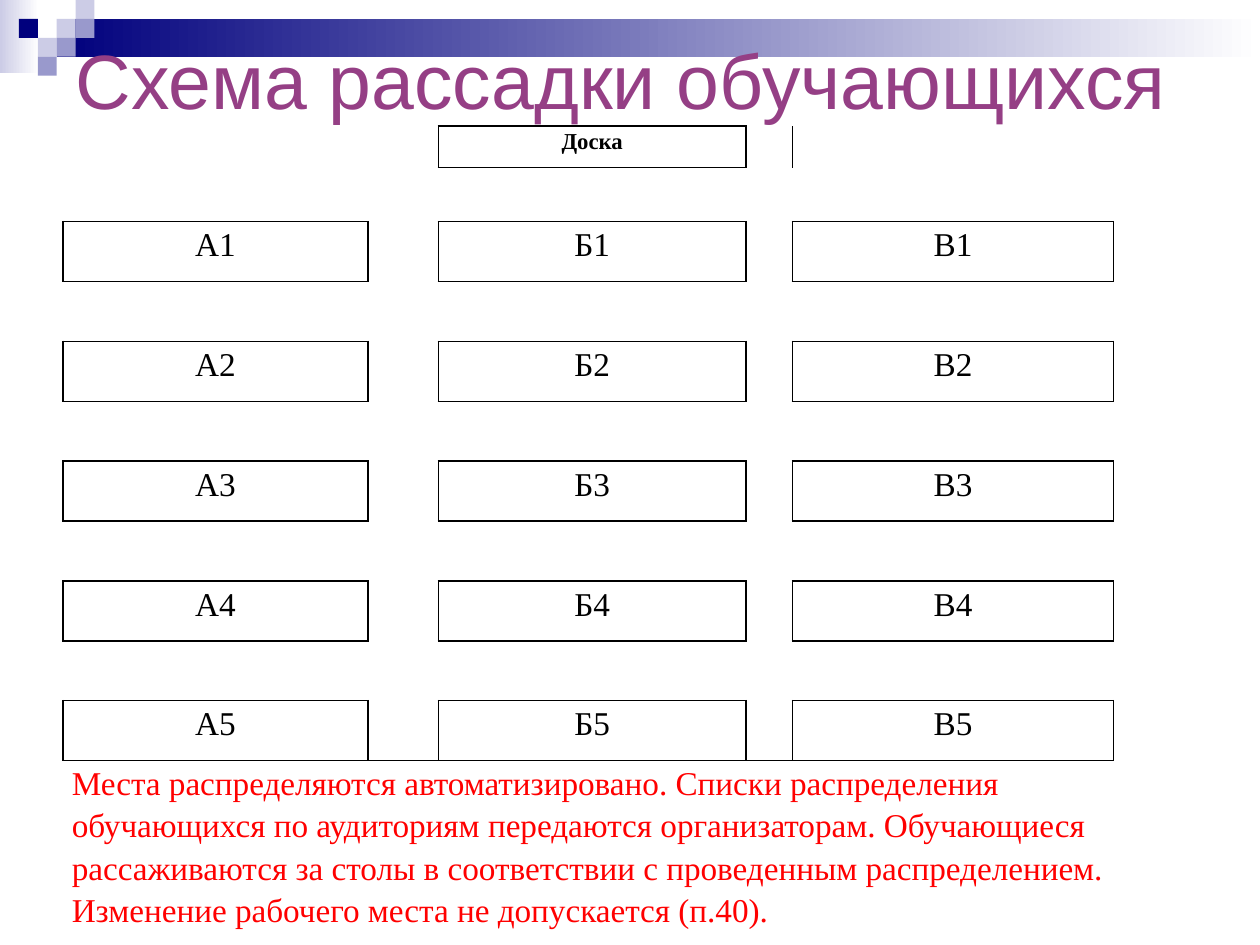
from dataclasses import dataclass

from lxml.etree import SubElement
from pptx import Presentation
from pptx.dml.color import RGBColor
from pptx.enum.shapes import MSO_SHAPE
from pptx.enum.text import MSO_ANCHOR, PP_ALIGN
from pptx.oxml.ns import qn
from pptx.util import Inches, Pt


@dataclass(frozen=True)
class Theme:
    navy: str = "00007D"
    lilac: str = "9999CC"
    pale: str = "CCCCE6"
    white: str = "FFFFFF"
    title: str = "953F85"
    ink: str = "000000"
    alert: str = "FF0000"
    title_font: str = "Arial"
    table_font: str = "Times New Roman"
    title_size: int = 44
    seat_size: int = 19
    board_size: int = 13
    border_width: int = 1


@dataclass(frozen=True)
class Band:
    left: float
    top: float
    width: float
    height: float
    color: str


@dataclass(frozen=True)
class Tile:
    column: int
    row: int
    color: str


THEME = Theme()
TILE = 0.15
BANDS = [
    Band(0, 0, 0.31, 0.58, THEME.pale),
    Band(0.45, 0.15, 9.55, 0.3, THEME.navy),
]
TILES = [
    Tile(3, 1, THEME.pale),
    Tile(4, 0, THEME.pale),
    Tile(4, 1, THEME.lilac),
    Tile(2, 2, THEME.pale),
    Tile(1, 1, THEME.navy),
    Tile(3, 2, THEME.lilac),
    Tile(2, 3, THEME.lilac),
]

SEAT_LETTERS = "АБВ"
SEAT_ROWS = 5
SEAT_BLOCK_HEIGHT = 4.28
COLUMN_WIDTHS = [2.42, 0.56, 2.44, 0.37, 2.55, 0.58]
BLOCK_ROWS = 2 * SEAT_ROWS - 1
ROW_HEIGHTS = [0.33, 0.43] + [SEAT_BLOCK_HEIGHT / BLOCK_ROWS] * BLOCK_ROWS + [2.91]
NOTE_ROW = len(ROW_HEIGHTS) - 1
NOTE_SPAN = 5
NOTE = (
    "Места распределяются автоматизировано. Списки распределения обучающихся "
    "по аудиториям передаются организаторам. Обучающиеся рассаживаются за столы "
    "в соответствии с проведенным распределением. Изменение рабочего места "
    "не допускается (п.40)."
)
BOARD = (0, 2)
SEATS = {
    (2 + 2 * row, 2 * column): f"{letter}{row + 1}"
    for row in range(SEAT_ROWS)
    for column, letter in enumerate(SEAT_LETTERS)
}
BOXES = {BOARD, *SEATS}
NO_GRID_STYLE = "{2D5ABB26-0587-4C30-8999-92F81FD0307C}"
# Border tags in schema order, each with the step to the neighbouring cell
SIDES = {"a:lnL": (0, -1), "a:lnR": (0, 1), "a:lnT": (-1, 0), "a:lnB": (1, 0)}


def rgb(color: str) -> RGBColor:
    return RGBColor.from_string(color)


def add_block(slide, left: float, top: float, width: float, height: float):
    block = slide.shapes.add_shape(
        MSO_SHAPE.RECTANGLE, Inches(left), Inches(top), Inches(width), Inches(height)
    )
    block.shadow.inherit = False
    block.line.fill.background()
    return block


def draw_band(slide, band: Band) -> None:
    fill = add_block(slide, band.left, band.top, band.width, band.height).fill
    fill.gradient()
    fill.gradient_angle = 0
    for stop, color, position in zip(fill.gradient_stops, (band.color, THEME.white), (0, 1)):
        stop.color.rgb = rgb(color)
        stop.position = position


def draw_tile(slide, tile: Tile) -> None:
    fill = add_block(slide, TILE * tile.column, TILE * tile.row, TILE, TILE).fill
    fill.solid()
    fill.fore_color.rgb = rgb(tile.color)


def place_title(slide) -> None:
    """Fill the title and bring it in front of the decoration."""
    title = slide.shapes.title
    title.left, title.top = Inches(0.5), Inches(0.25)
    title.width, title.height = Inches(9), Inches(0.75)
    frame = title.text_frame
    frame.text = "Схема рассадки обучающихся"
    frame.vertical_anchor = MSO_ANCHOR.MIDDLE
    heading = frame.paragraphs[0]
    heading.alignment = PP_ALIGN.LEFT
    heading.font.name = THEME.title_font
    heading.font.size = Pt(THEME.title_size)
    heading.font.color.rgb = rgb(THEME.title)
    slide.shapes._spTree.append(title._element)


def is_ruled(row: int, column: int, side: str) -> bool:
    """A side is ruled when it touches a box or tops the note."""
    down, right = SIDES[side]
    touches_box = bool(BOXES & {(row, column), (row + down, column + right)})
    tops_note = (row, side) in {(NOTE_ROW, "a:lnT"), (NOTE_ROW - 1, "a:lnB")}
    return touches_box or (tops_note and column < NOTE_SPAN)


def rule_cell(cell, row: int, column: int) -> None:
    properties = cell._tc.get_or_add_tcPr()
    for side in SIDES:
        if is_ruled(row, column, side):
            line = SubElement(properties, qn(side), w=str(Pt(THEME.border_width)))
            fill = SubElement(line, qn("a:solidFill"))
            SubElement(fill, qn("a:srgbClr"), val=THEME.ink)


def write_cell(cell, text: str, color: str = THEME.ink, size: int = THEME.seat_size,
               bold: bool = False, alignment: PP_ALIGN = PP_ALIGN.CENTER) -> None:
    cell.text = text
    paragraph = cell.text_frame.paragraphs[0]
    paragraph.alignment = alignment
    paragraph.line_spacing = 1.15
    paragraph.font.name = THEME.table_font
    paragraph.font.size = Pt(size)
    paragraph.font.bold = bold
    paragraph.font.color.rgb = rgb(color)


def draw_seating(slide) -> None:
    seating = slide.shapes.add_table(
        len(ROW_HEIGHTS), len(COLUMN_WIDTHS), Inches(0.5), Inches(1),
        Inches(sum(COLUMN_WIDTHS)), Inches(sum(ROW_HEIGHTS)),
    ).table
    seating.first_row = seating.horz_banding = False
    seating._tbl.tblPr.find(qn("a:tableStyleId")).text = NO_GRID_STYLE
    for column, width in zip(seating.columns, COLUMN_WIDTHS):
        column.width = Inches(width)
    for row, height in zip(seating.rows, ROW_HEIGHTS):
        row.height = Inches(height)

    seating.cell(NOTE_ROW, 0).merge(seating.cell(NOTE_ROW, NOTE_SPAN - 1))
    for row in range(len(ROW_HEIGHTS)):
        for column in range(len(COLUMN_WIDTHS)):
            cell = seating.cell(row, column)
            cell.margin_left = cell.margin_right = Inches(0.07)
            cell.margin_top = cell.margin_bottom = 0
            rule_cell(cell, row, column)
            cell.fill.background()
            cell.text_frame.paragraphs[0].font.size = Pt(THEME.board_size)

    write_cell(seating.cell(*BOARD), "Доска", size=THEME.board_size, bold=True)
    for position, seat in SEATS.items():
        write_cell(seating.cell(*position), seat)
    write_cell(seating.cell(NOTE_ROW, 0), NOTE, THEME.alert, alignment=PP_ALIGN.LEFT)


def main() -> None:
    deck = Presentation()
    deck.slide_width, deck.slide_height = Inches(10), Inches(7.5)
    slide = deck.slides.add_slide(deck.slide_layouts[5])
    for band in BANDS:
        draw_band(slide, band)
    for tile in TILES:
        draw_tile(slide, tile)
    place_title(slide)
    draw_seating(slide)
    deck.save("out.pptx")


if __name__ == "__main__":
    main()
